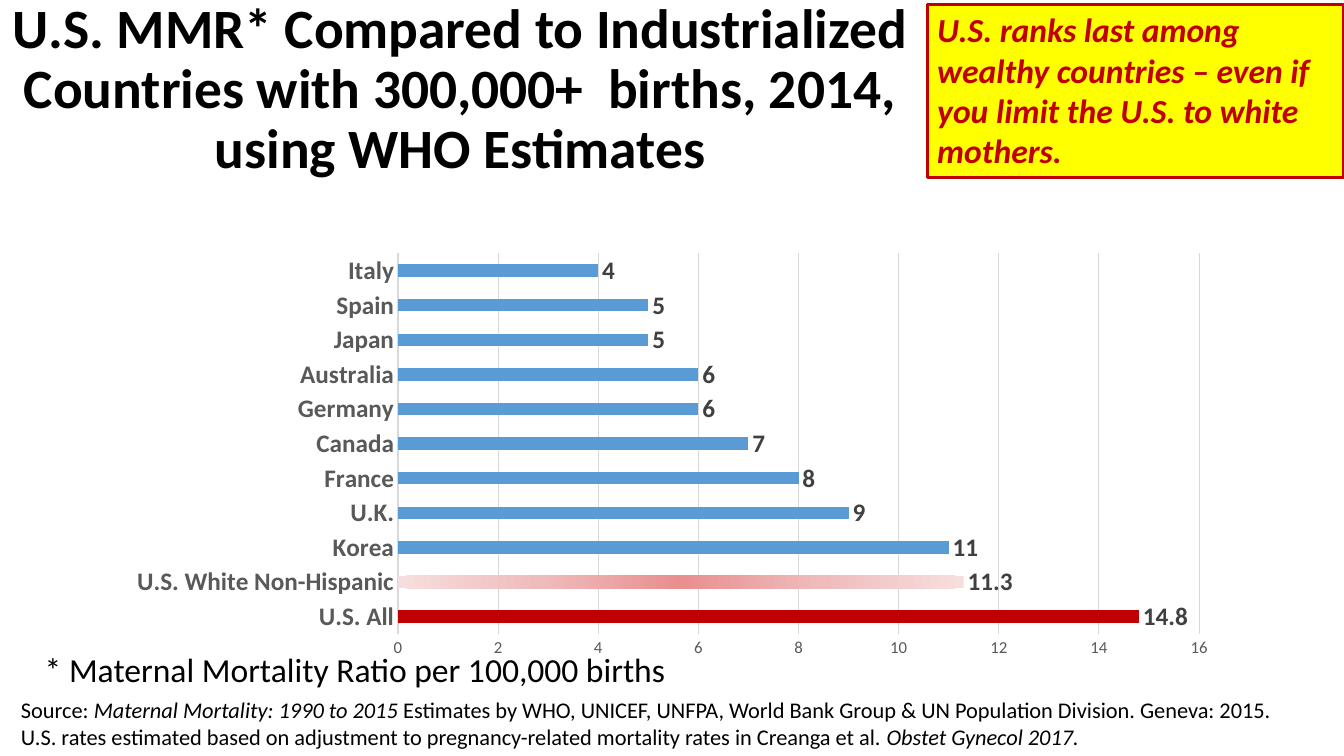
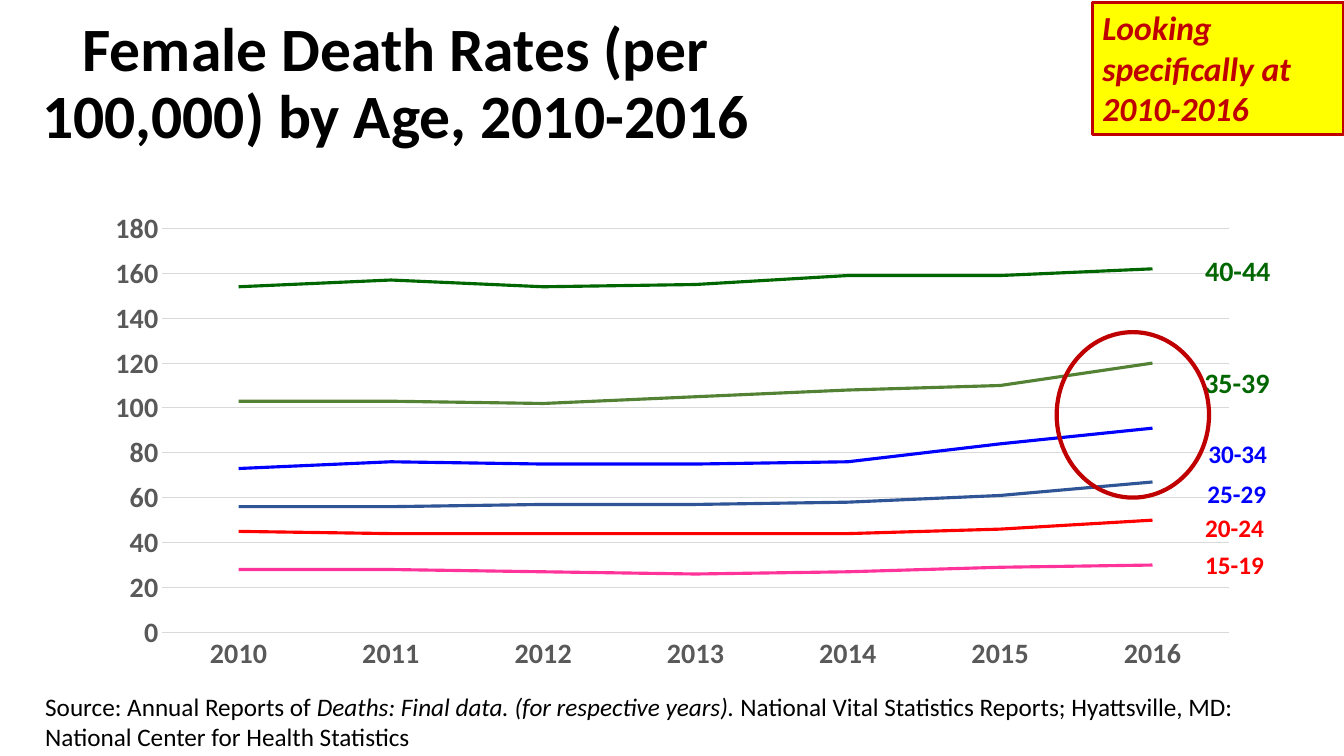
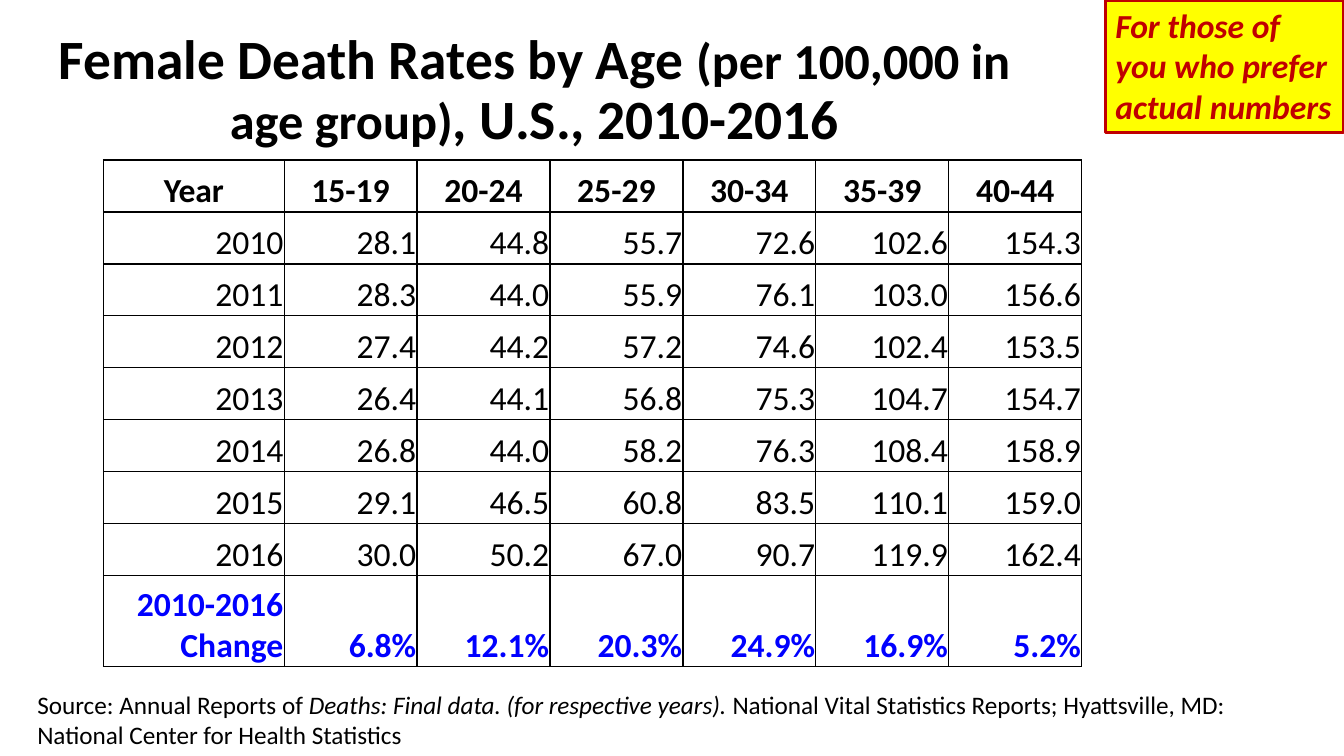
from lxml import etree
from pptx import Presentation
from pptx.chart.data import CategoryChartData
from pptx.dml.color import RGBColor
from pptx.enum.chart import XL_CHART_TYPE, XL_LABEL_POSITION, XL_TICK_MARK
from pptx.enum.shapes import MSO_SHAPE
from pptx.enum.text import MSO_ANCHOR, MSO_AUTO_SIZE, PP_ALIGN
from pptx.oxml import parse_xml
from pptx.oxml.ns import qn
from pptx.util import Cm, Pt

# Shared look
FONT = "Calibri"
BLACK, RED, YELLOW, BLUE = "000000", "C00000", "FFFF00", "0000FF"
BAR_BLUE, GRID, AXIS_GREY, LABEL_GREY = "5B9BD5", "D9D9D9", "595959", "404040"
TITLE_ONLY = 5
LEFT, CENTER, RIGHT = PP_ALIGN.LEFT, PP_ALIGN.CENTER, PP_ALIGN.RIGHT
TOP, MIDDLE, BOTTOM = MSO_ANCHOR.TOP, MSO_ANCHOR.MIDDLE, MSO_ANCHOR.BOTTOM
NO_FIT, GROW = MSO_AUTO_SIZE.NONE, MSO_AUTO_SIZE.SHAPE_TO_FIT_TEXT
BAR, LINE = XL_CHART_TYPE.BAR_CLUSTERED, XL_CHART_TYPE.LINE
RECTANGLE, OVAL = MSO_SHAPE.RECTANGLE, MSO_SHAPE.OVAL
NO_TICK = XL_TICK_MARK.NONE
OUTSIDE_END = XL_LABEL_POSITION.OUTSIDE_END

# Content
RATIOS = {"U.S. All": 14.8, "U.S. White Non-Hispanic": 11.3, "Korea": 11,
          "U.K.": 9, "France": 8, "Canada": 7, "Germany": 6, "Australia": 6,
          "Japan": 5, "Spain": 5, "Italy": 4}
YEARS = [str(year) for year in range(2010, 2017)]
RATES = {
    "15-19": (28.1, 28.3, 27.4, 26.4, 26.8, 29.1, 30.0),
    "20-24": (44.8, 44.0, 44.2, 44.1, 44.0, 46.5, 50.2),
    "25-29": (55.7, 55.9, 57.2, 56.8, 58.2, 60.8, 67.0),
    "30-34": (72.6, 76.1, 74.6, 75.3, 76.3, 83.5, 90.7),
    "35-39": (102.6, 103.0, 102.4, 104.7, 108.4, 110.1, 119.9),
    "40-44": (154.3, 156.6, 153.5, 154.7, 158.9, 159.0, 162.4),
}
CHANGES = ["6.8%", "12.1%", "20.3%", "24.9%", "16.9%", "5.2%"]
LINE_COLORS = ["FF3399", "FF0000", "2F5597", "0000FF", "548235", "006600"]
# Age label: left, top, width, size, colour
AGE_LABELS = [(30.12, 13.72, 2.03, 18, "FF0000"),
              (30.12, 12.78, 2.03, 18, "FF0000"),
              (30.18, 11.94, 2.03, 18, BLUE),
              (30.2, 10.92, 2.03, 18, BLUE),
              (30.1, 9.09, 2.2, 20, "006600"),
              (30.12, 6.26, 2.2, 20, "006600")]
DEATHS_SOURCE = [
    ("Source: Annual Reports of ", {}),
    ("Deaths: Final data. (for respective years). ", {"italic": True}),
    ("National Vital Statistics Reports; Hyattsville, MD: "
     "National Center for Health Statistics", {})]


def rgb(value):
    return RGBColor.from_string(value)


def lengths(*values):
    return [Cm(value) for value in values]


def style_font(font, size, color=BLACK, bold=False, italic=False):
    font.name, font.size = FONT, Pt(size)
    font.bold, font.italic = bold, italic
    font.color.rgb = rgb(color)


def write(frame, spans, size, align=LEFT, anchor=TOP, **style):
    """Fill a frame with one paragraph of (text, style changes) spans."""
    if isinstance(spans, str):
        spans = [(spans, {})]
    frame.vertical_anchor = anchor
    para = frame.paragraphs[0]
    para.alignment = align
    for text, changes in spans:
        span = para.add_run()
        span.text = text
        style_font(span.font, **{"size": size, **style, **changes})
    return para


# Text elements
def add_titled_page(deck, spans, size, area):
    page = deck.slides.add_slide(deck.slide_layouts[TITLE_ONLY])
    title = page.shapes.title
    title.left, title.top, title.width, title.height = lengths(*area)
    frame = title.text_frame
    frame.word_wrap, frame.auto_size = True, NO_FIT
    para = write(frame, spans, size, CENTER, MIDDLE, bold=True)
    para.line_spacing = 0.9
    para.space_before = Pt(0)
    return page


def add_text(page, spans, size, area, wrap=True, **style):
    frame = page.shapes.add_textbox(*lengths(*area)).text_frame
    frame.word_wrap, frame.auto_size = wrap, GROW
    write(frame, spans, size, **style)


def add_outlined(page, kind, area, width, fill=None):
    shape = page.shapes.add_shape(kind, *lengths(*area))
    shape.shadow.inherit = False
    if fill:
        shape.fill.solid()
        shape.fill.fore_color.rgb = rgb(fill)
    else:
        shape.fill.background()
    shape.line.color.rgb = rgb(RED)
    shape.line.width = Pt(width)
    return shape


def add_callout(page, text, area):
    frame = add_outlined(page, RECTANGLE, area, 2.25, YELLOW).text_frame
    frame.word_wrap, frame.auto_size = True, GROW
    write(frame, text, 24, color=RED, bold=True, italic=True)


# Charts
def set_plot_area(chart, x, y, w, h):
    """Fix the inner plot area, as fractions of the chart."""
    plot_area = chart.plots[0]._element.getparent()
    for old in plot_area.findall(qn("c:layout")):
        plot_area.remove(old)
    layout = etree.Element(qn("c:layout"))
    manual = etree.SubElement(layout, qn("c:manualLayout"))
    settings = {"layoutTarget": "inner", "xMode": "edge", "yMode": "edge",
                "x": x, "y": y, "w": w, "h": h}
    for name, value in settings.items():
        etree.SubElement(manual, qn("c:" + name)).set("val", str(value))
    plot_area.insert(0, layout)


def style_axis(axis, size, bold):
    axis.major_tick_mark = axis.minor_tick_mark = NO_TICK
    style_font(axis.tick_labels.font, size, AXIS_GREY, bold)


def add_styled_chart(page, kind, categories, table, area, plot_area,
                     category_size, value_size, maximum, step):
    data = CategoryChartData()
    data.categories = categories
    for name, values in table.items():
        data.add_series(name, values)
    chart = page.shapes.add_chart(kind, *lengths(*area), data).chart
    chart.has_legend = chart.has_title = False
    style_font(chart.font, 10)
    chart.plots[0].vary_by_categories = False
    set_plot_area(chart, *plot_area)

    style_axis(chart.category_axis, category_size, True)
    value_axis = chart.value_axis
    style_axis(value_axis, value_size, kind == LINE)
    value_axis.minimum_scale, value_axis.maximum_scale = 0, maximum
    value_axis.major_unit = step
    value_axis.tick_labels.number_format = "0"
    value_axis.tick_labels.number_format_is_linked = False
    value_axis.format.line.fill.background()
    value_axis.has_major_gridlines = True
    for line in (chart.category_axis.format.line,
                 value_axis.major_gridlines.format.line):
        line.color.rgb = rgb(GRID)
        line.width = Pt(0.75)
    return chart


def fill_solid(element, color):
    element.format.fill.solid()
    element.format.fill.fore_color.rgb = rgb(color)


def fill_radial(series, index, stops):
    """Give one bar a gradient that runs outwards from its centre."""
    series.points[index].format.line.fill.background()
    properties = series._element.xpath(
        f'c:dPt[c:idx/@val="{index}"]/c:spPr')[0]
    marks = "".join(
        f'<a:gs pos="{place * 1000}"><a:srgbClr val="{color}"/></a:gs>'
        for place, color in stops)
    properties.insert(0, parse_xml(
        '<a:gradFill xmlns:a="http://schemas.openxmlformats.org/drawingml/'
        f'2006/main" rotWithShape="1"><a:gsLst>{marks}</a:gsLst>'
        '<a:path path="circle"><a:fillToRect l="50000" t="50000" r="50000"'
        ' b="50000"/></a:path></a:gradFill>'))


def add_ratio_chart(page):
    chart = add_styled_chart(
        page, BAR, list(RATIOS), {"MMR": list(RATIOS.values())},
        (3.02, 6.17, 28.04, 10.66), (0.25, 0.02, 0.72, 0.9), 18, 12, 16, 2)
    plot = chart.plots[0]
    plot.gap_width = 182
    bars = plot.series[0]
    bars.invert_if_negative = False
    fill_solid(bars, BAR_BLUE)
    fill_solid(bars.points[0], RED)
    fill_radial(bars, 1, [(0, "E98F8F"), (50, "EFBCBC"), (100, "F7DEDE")])
    labels = bars.data_labels
    labels.show_value = True
    labels.position = OUTSIDE_END
    style_font(labels.font, 18, LABEL_GREY, True)


def add_rate_chart(page):
    rounded = {age: [round(value) for value in values]
               for age, values in RATES.items()}
    chart = add_styled_chart(
        page, LINE, YEARS, rounded, (2.34, 5.03, 29.21, 12.12),
        (0.06, 0.06, 0.92, 0.84), 20, 20, 180, 20)
    for series, color in zip(chart.plots[0].series, LINE_COLORS):
        series.smooth = False
        series.format.line.color.rgb = rgb(color)
        series.format.line.width = Pt(2.25)


# Table
def add_borders(cell):
    properties = cell._tc.get_or_add_tcPr()
    for side in ("lnL", "lnR", "lnT", "lnB"):
        line = etree.SubElement(properties, qn("a:" + side), w=str(Pt(1)))
        fill = etree.SubElement(line, qn("a:solidFill"))
        etree.SubElement(fill, qn("a:srgbClr"), val=BLACK)


def add_rate_table(page):
    rows = [["Year", *RATES]]
    for year, *values in zip(YEARS, *RATES.values()):
        rows.append([year] + [f"{value:.1f}" for value in values])
    rows.append(["2010-2016 Change", *CHANGES])
    last = len(rows) - 1
    widths = [4.55] + [3.35] * len(RATES)
    heights = [1.31] * last + [2.29]

    table = page.shapes.add_table(
        len(rows), len(widths),
        *lengths(2.61, 4.03, sum(widths), sum(heights))).table
    table.first_row = table.horz_banding = False
    for column, width in zip(table.columns, widths):
        column.width = Cm(width)
    for index, (row, height, texts) in enumerate(
            zip(table.rows, heights, rows)):
        row.height = Cm(height)
        for cell, text in zip(row.cells, texts):
            add_borders(cell)
            cell.fill.background()
            cell.margin_left = cell.margin_right = cell.margin_top = Cm(0.02)
            cell.margin_bottom = 0
            write(cell.text_frame, text, 24, CENTER if index == 0 else RIGHT,
                  color=BLUE if index == last else BLACK,
                  bold=index in (0, last))
            cell.vertical_anchor = BOTTOM


# Slides
def build_ratio_page(deck):
    page = add_titled_page(
        deck, "U.S. MMR* Compared to Industrialized Countries with "
        "300,000+  births, 2014, using WHO Estimates", 39.6,
        (0, 0, 23.2, 4.57))
    add_ratio_chart(page)
    add_text(page, "* Maternal Mortality Ratio per 100,000 births", 24,
             (0.48, 16.23, 16.94, 1.27), align=CENTER)
    add_text(page, [
        ("Source: ", {}),
        ("Maternal Mortality: 1990 to 2015", {"italic": True}),
        (" Estimates by WHO, UNICEF, UNFPA, World Bank Group & UN Population "
         "Division. Geneva: 2015. U.S. rates estimated based on adjustment "
         "to pregnancy-related mortality rates in Creanga et al. ", {}),
        ("Obstet Gynecol 2017.", {"italic": True})], 16,
        (0.28, 17.42, 32.31, 1.63))
    add_callout(page, "U.S. ranks last among wealthy countries – even if you "
                "limit the U.S. to white mothers.", (23.37, 0.11, 10.49, 4.37))


def build_trend_page(deck):
    page = add_titled_page(
        deck, "Female Death Rates (per 100,000) by Age, 2010-2016", 44,
        (0.51, 0.3, 18.95, 3.68))
    add_rate_chart(page)
    for age, (left, top, width, size, color) in zip(RATES, AGE_LABELS):
        add_text(page, age, size, (left, top, width, size * 0.06),
                 wrap=False, color=color, bold=True)
    add_outlined(page, OVAL, (26.63, 8.37, 3.84, 4.17), 3)
    add_text(page, DEATHS_SOURCE, 18, (0.89, 17.3, 30.66, 1.8))
    add_callout(page, "Looking specifically at 2010-2016",
                (27.53, 0.06, 6.32, 3.33))


def build_table_page(deck):
    page = add_titled_page(deck, [
        ("Female Death Rates by Age ", {}),
        ("(per 100,000 in age group)", {"size": 36}),
        (", U.S., 2010-2016", {})], 39.6, (1.04, 1.02, 24.87, 2.57))
    add_rate_table(page)
    add_text(page, DEATHS_SOURCE, 18, (0.69, 17.25, 30.66, 1.8))
    add_callout(page, "For those of you who prefer actual numbers",
                (27.86, 0, 5.99, 3.33))


def main():
    deck = Presentation()
    deck.slide_width, deck.slide_height = lengths(33.87, 19.05)
    build_ratio_page(deck)
    build_trend_page(deck)
    build_table_page(deck)
    deck.save("out.pptx")


if __name__ == "__main__":
    main()
